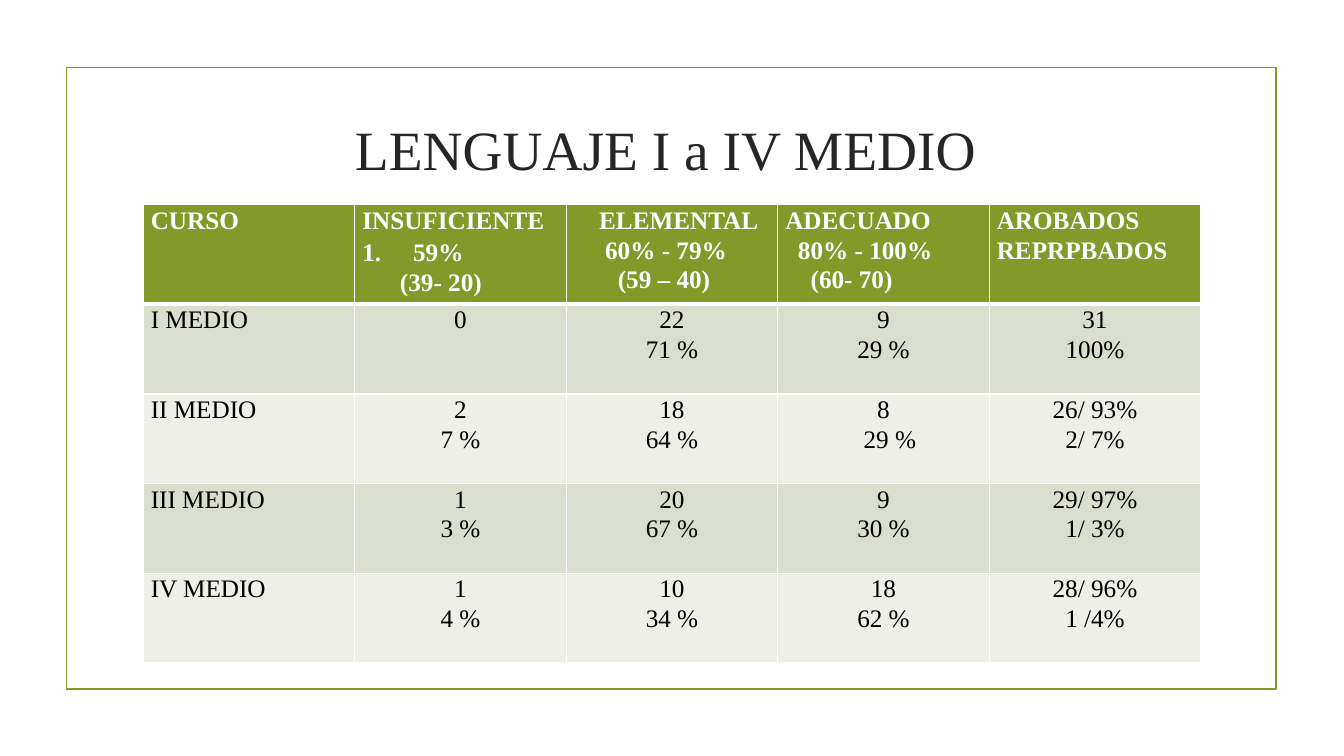
from lxml import etree
from pptx import Presentation
from pptx.dml.color import RGBColor
from pptx.enum.shapes import MSO_SHAPE
from pptx.enum.text import MSO_ANCHOR, PP_ALIGN
from pptx.oxml.ns import qn
from pptx.util import Cm, Pt

RECTANGLE = MSO_SHAPE.RECTANGLE
MIDDLE = MSO_ANCHOR.MIDDLE
LEFT, CENTER = PP_ALIGN.LEFT, PP_ALIGN.CENTER

# Content: each header line is (text, left indent in cm)
TITLE = "LENGUAJE I a IV MEDIO "
HEADERS = [
    [("CURSO", 0)],
    [("INSUFICIENTE", 0), ("59%", 1.28), ("(39- 20)", 0.95)],
    [("ELEMENTAL", 0.64), ("60% - 79%", 0.79), ("(59 – 40)", 1.11)],
    [("ADECUADO", 0), ("80% - 100%", 0.32), ("(60- 70)", 0.64)],
    [("AROBADOS", 0), ("REPRPBADOS", 0)],
]
NUMBERED = "59%"
RESULTS = [
    ["I MEDIO", "0", "22\n71 %", "9\n29 %", "31\n100%"],
    ["II MEDIO", "2\n7 %", "18\n64 %", "8\n29 %", "26/ 93%\n2/ 7%"],
    ["III MEDIO", "1\n3 %", "20\n67 %", "9\n30 %", "29/ 97%\n1/ 3%"],
    ["IV MEDIO", "1\n4 %", "10\n34 %", "18\n62 %", "28/ 96%\n1 /4%"],
]
SHIFTED = {(2, 3, 1): 0.32}  # (row, column, line): indent in cm

# Style
FONT = "Times New Roman"
GREEN, WHITE, BLACK, DARK = "83992A", "FFFFFF", "000000", "262626"
BANDS = ["D9DECD", "EDEFE8"]
COLUMN_WIDTH, HEADER_HEIGHT, ROW_HEIGHT = 5.33, 2.28, 2.26


def color(code):
    return RGBColor.from_string(code)


def add_span(para, text, size, code, bold=False):
    span = para.add_run()
    span.text = text
    span.font.name = FONT
    span.font.size = Pt(size)
    span.font.bold = bold
    span.font.color.rgb = color(code)


def set_indent(para, margin, first=0):
    properties = para._p.get_or_add_pPr()
    properties.set("marL", str(Cm(margin)))
    properties.set("indent", str(Cm(first)))
    return properties


def add_number(para, margin):
    properties = set_indent(para, margin, -margin)
    etree.SubElement(properties, qn("a:buAutoNum"), type="arabicPeriod")


def set_borders(cell, row):
    widths = {"L": 1, "R": 1, "T": 3 if row == 1 else 1, "B": 3 if row == 0 else 1}
    for side, width in widths.items():
        line = etree.SubElement(cell._tc.get_or_add_tcPr(), qn("a:ln" + side), w=str(Pt(width)))
        fill = etree.SubElement(line, qn("a:solidFill"))
        etree.SubElement(fill, qn("a:srgbClr"), val=WHITE)


def fill_cell(cell, row, column, lines):
    header = row == 0
    cell.margin_left = cell.margin_right = Cm(0.19)
    cell.margin_top = cell.margin_bottom = Cm(0)
    set_borders(cell, row)
    cell.fill.solid()
    cell.fill.fore_color.rgb = color(GREEN if header else BANDS[(row - 1) % 2])
    for index, (text, indent) in enumerate(lines):
        frame = cell.text_frame
        para = frame.add_paragraph() if index else frame.paragraphs[0]
        numbered = header and text == NUMBERED
        if numbered:
            add_number(para, indent)
        elif indent:
            set_indent(para, indent)
        para.alignment = LEFT if header or column == 0 else CENTER
        para.line_spacing = 1.15 if numbered else 1.07
        add_span(para, text, 18, WHITE if header else BLACK, header)


deck = Presentation()
deck.slide_width, deck.slide_height = Cm(33.87), Cm(19.05)
page = deck.slides.add_slide(deck.slide_layouts[6])

# Frame around the page
border = page.shapes.add_shape(RECTANGLE, Cm(1.68), Cm(1.7), Cm(30.48), Cm(15.67))
border.shadow.inherit = False
border.fill.background()
border.line.color.rgb = color(GREEN)
border.line.width = Pt(1.25)

# Title
box = page.shapes.add_textbox(Cm(3.61), Cm(2.72), Cm(26.67), Cm(2.03))
box.text_frame.word_wrap = True
box.text_frame.vertical_anchor = MIDDLE
heading = box.text_frame.paragraphs[0]
heading.alignment = CENTER
add_span(heading, TITLE, 39.6, DARK)

# Results table
row_count, column_count = len(RESULTS) + 1, len(HEADERS)
table = page.shapes.add_table(
    row_count, column_count, Cm(3.61), Cm(5.16), Cm(COLUMN_WIDTH * column_count),
    Cm(HEADER_HEIGHT + ROW_HEIGHT * len(RESULTS))).table
for table_column in table.columns:
    table_column.width = Cm(COLUMN_WIDTH)
for row, table_row in enumerate(table.rows):
    table_row.height = Cm(ROW_HEIGHT if row else HEADER_HEIGHT)
    for column in range(column_count):
        if row == 0:
            lines = HEADERS[column]
        else:
            lines = [(text, SHIFTED.get((row, column, index), 0))
                     for index, text in enumerate(RESULTS[row - 1][column].split("\n"))]
        fill_cell(table.cell(row, column), row, column, lines)

deck.save("out.pptx")
